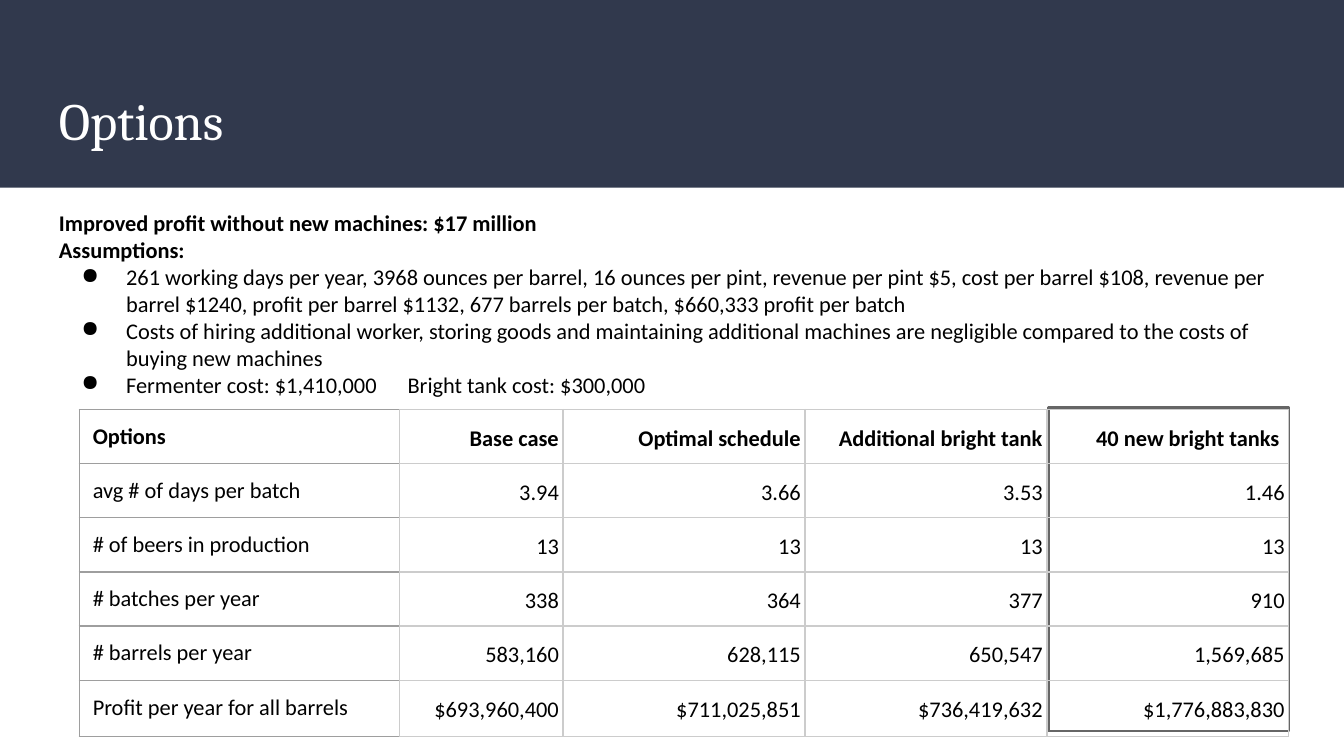
from dataclasses import dataclass

from lxml import etree
from pptx import Presentation
from pptx import util as u
from pptx.dml.color import RGBColor
from pptx.enum import shapes, text
from pptx.oxml.ns import qn


@dataclass(frozen=True)
class Theme:
    banner: str = "31394D"
    title: str = "FFFFFF"
    ink: str = "000000"
    highlight: str = "666666"
    label_border: str = "9E9E9E"
    value_border: str = "CCCCCC"
    title_font: str = "Cambria"
    body_font: str = "Calibri"
    title_size: float = 28
    body_size: float = 12


class OptionsSlide:
    """Draws styled elements on one slide, with lengths in points."""

    def __init__(self, slide, theme):
        self.slide = slide
        self.theme = theme

    def rectangle(self, left, top, width, height, fill=None, line=None, weight=1.5):
        box = self.slide.shapes.add_shape(
            shapes.MSO_SHAPE.RECTANGLE, *map(u.Pt, (left, top, width, height)))
        box.shadow.inherit = False
        if fill:
            box.fill.solid()
            box.fill.fore_color.rgb = RGBColor.from_string(fill)
        else:
            box.fill.background()
        if line:
            box.line.color.rgb = RGBColor.from_string(line)
            box.line.width = u.Pt(weight)
        else:
            box.line.fill.background()

    def run(self, paragraph, words, bold=False, font=None, size=None, color=None):
        run = paragraph.add_run()
        run.text = words
        run.font.name = font or self.theme.body_font
        run.font.size = u.Pt(size or self.theme.body_size)
        run.font.bold = bold
        run.font.color.rgb = RGBColor.from_string(color or self.theme.ink)
        return run

    def gap(self, paragraph, width):
        space = self.run(paragraph, " ")
        space.font._element.set("spc", str(round(width * 100)))

    def text_frame(self, left, top, width, height, anchor=text.MSO_ANCHOR.TOP):
        frame = self.slide.shapes.add_textbox(
            *map(u.Pt, (left, top, width, height))).text_frame
        frame.word_wrap = True
        frame.vertical_anchor = anchor
        frame.margin_left = frame.margin_right = u.Pt(7.2)
        frame.margin_top = frame.margin_bottom = u.Pt(7.2)
        return frame

    def bullet(self, paragraph):
        props = paragraph._p.get_or_add_pPr()
        props.set("marL", str(u.Pt(36)))
        props.set("indent", str(u.Pt(-24)))
        color = etree.SubElement(props, qn("a:buClr"))
        etree.SubElement(color, qn("a:srgbClr"), val=self.theme.ink)
        etree.SubElement(props, qn("a:buChar"), char="●")

    def borders(self, cell, **colors):
        props = cell._tc.get_or_add_tcPr()
        for side in "LRTB":
            line = etree.SubElement(props, qn(f"a:ln{side}"), w=str(u.Pt(0.75)))
            fill = etree.SubElement(line, qn("a:solidFill"))
            etree.SubElement(fill, qn("a:srgbClr"),
                             val=colors.get(side, self.theme.value_border))

    def cell(self, cell, words, is_label, bold):
        side, edge = (7.2, 7.2) if is_label else (2.25, 1.5)
        cell.margin_left = cell.margin_right = u.Pt(side)
        cell.margin_top = cell.margin_bottom = u.Pt(edge)
        cell.vertical_anchor = text.MSO_ANCHOR.MIDDLE
        paragraph = cell.text_frame.paragraphs[0]
        if not is_label:
            paragraph.alignment = text.PP_ALIGN.RIGHT
            paragraph.line_spacing = 1.15
        self.run(paragraph, words, bold)
        self.borders(cell, **(dict.fromkeys("LTB", self.theme.label_border)
                              if is_label else {}))
        cell.fill.background()

    def table(self, left, top, widths, heights, rows):
        table = self.slide.shapes.add_table(
            len(rows), len(widths),
            *map(u.Pt, (left, top, sum(widths), sum(heights)))).table
        table.first_row = table.horz_banding = False
        for column, width in zip(table.columns, widths):
            column.width = u.Pt(width)
        for r, (row, height) in enumerate(zip(rows, heights)):
            table.rows[r].height = u.Pt(height)
            for c, words in enumerate(row):
                self.cell(table.cell(r, c), words, is_label=c == 0, bold=r == 0)


HEADINGS = ["Improved profit without new machines: $17 million", "Assumptions:"]
ASSUMPTIONS = [
    ["261 working days per year, 3968 ounces per barrel, 16 ounces per pint, "
     "revenue per pint $5, cost per barrel $108, revenue per barrel $1240, "
     "profit per barrel $1132, 677 barrels per batch, $660,333 profit per batch"],
    ["Costs of hiring additional worker, storing goods and maintaining additional "
     "machines are negligible compared to the costs of buying new machines"],
    ["Fermenter cost: $1,410,000", "Bright tank cost: $300,000"],
]
OPTIONS = [
    ["Options", "Base case", "Optimal schedule", "Additional bright tank",
     "40 new bright tanks "],
    ["avg # of days per batch", "3.94", "3.66", "3.53", "1.46"],
    ["# of beers in production", "13", "13", "13", "13"],
    ["# batches per year", "338", "364", "377", "910"],
    ["# barrels per year", "583,160", "628,115", "650,547", "1,569,685"],
    ["Profit per year for all barrels", "$693,960,400", "$711,025,851",
     "$736,419,632", "$1,776,883,830"],
]


def main():
    deck = Presentation()
    deck.slide_width, deck.slide_height = u.Pt(720), u.Pt(405)
    theme = Theme()
    page = OptionsSlide(deck.slides.add_slide(deck.slide_layouts[6]), theme)

    page.rectangle(0, 0, 720, 100.5, fill=theme.banner)
    page.rectangle(561.6, 218.2, 129, 173.4, line=theme.highlight)

    title = page.text_frame(24.5, 39.6, 671, 49, text.MSO_ANCHOR.MIDDLE)
    page.run(title.paragraphs[0], "Options", font=theme.title_font,
             size=theme.title_size, color=theme.title)

    body = page.text_frame(24.5, 105.1, 671, 208)
    heading = body.paragraphs[0]
    page.run(heading, HEADINGS[0], bold=True)
    page.run(body.add_paragraph(), HEADINGS[1], bold=True)
    for parts in ASSUMPTIONS:
        assumption = body.add_paragraph()
        page.bullet(assumption)
        for index, part in enumerate(parts):
            if index:
                page.gap(assumption, 13.6)
            page.run(assumption, part)

    page.table(42.5, 219.4, [171.4, 87.8] + [129.6] * 3, [29] * 5 + [30], OPTIONS)
    deck.save("out.pptx")


if __name__ == "__main__":
    main()
